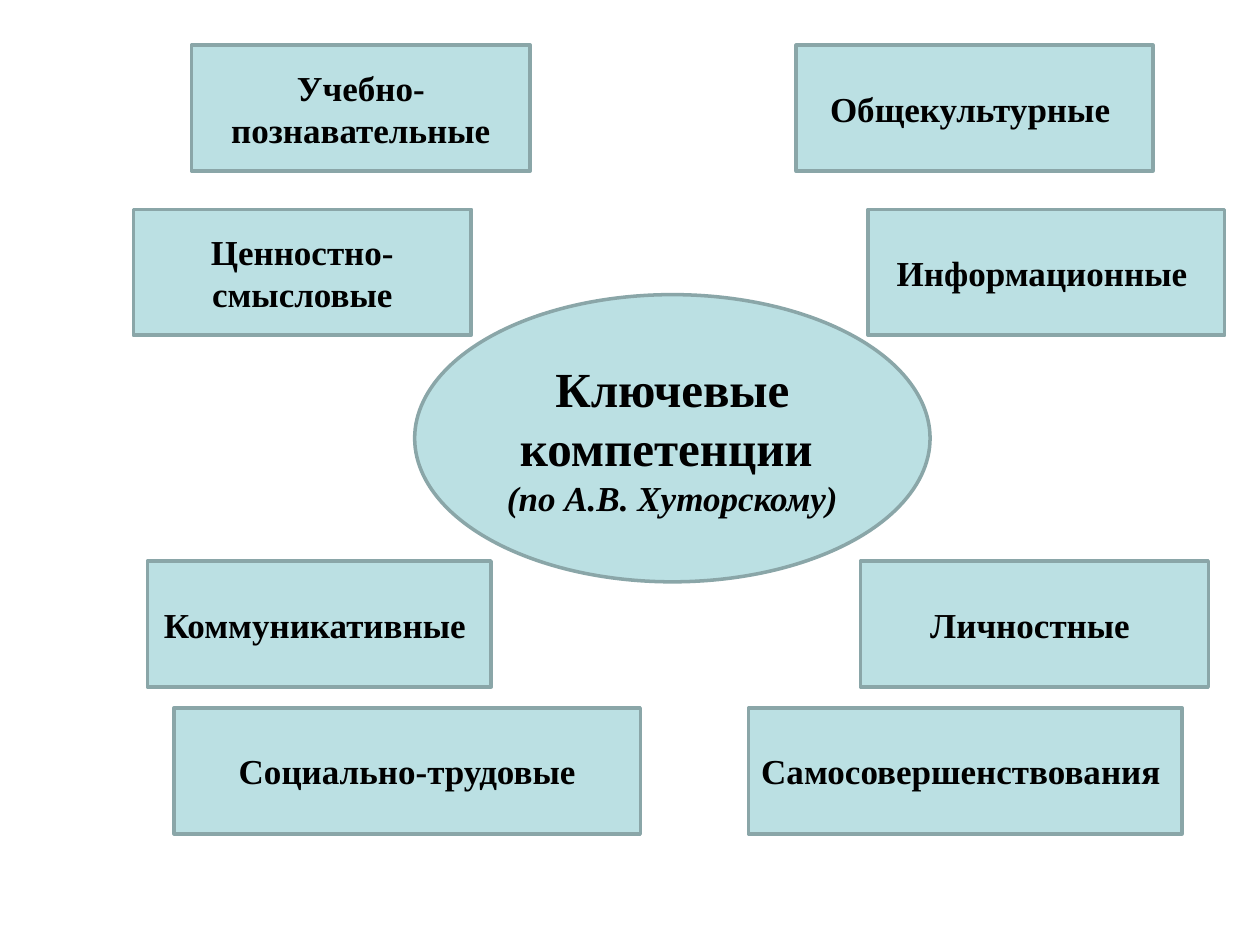
"""Build a slide of the key competences placed around a central oval."""
from dataclasses import dataclass

from pptx import Presentation
from pptx import util as u
from pptx.dml.color import RGBColor
from pptx.enum import shapes, text

COLORS = {"fill": "BBE0E3", "line": "8AA6A8", "text": "000000"}
FONT = "Times New Roman"
BOX_HEIGHT = 2.54
TOP_ROW, UPPER_ROW, LOWER_ROW, BOTTOM_ROW = 0.91, 4.22, 11.31, 14.27


@dataclass(frozen=True)
class Competence:
    label: str
    left: float
    top: float
    width: float


COMPETENCES = [
    Competence("Учебно-познавательные", 3.86, TOP_ROW, 6.83),
    Competence("Ценностно-смысловые", 2.69, UPPER_ROW, 6.81),
    Competence("Коммуникативные ", 2.97, LOWER_ROW, 6.93),
    Competence("Социально-трудовые", 3.51, BOTTOM_ROW, 9.4),
    Competence("Самосовершенствования ", 15.09, BOTTOM_ROW, 8.74),
    Competence("Личностные ", 17.35, LOWER_ROW, 7.01),
    Competence("Информационные ", 17.5, UPPER_ROW, 7.19),
    Competence("Общекультурные ", 16.05, TOP_ROW, 7.19),
]


def color(name: str) -> RGBColor:
    return RGBColor.from_string(COLORS[name])


def write(para, words: str, *, size: float = 20, italic: bool = False) -> None:
    para.alignment = text.PP_ALIGN.CENTER
    span = para.add_run()
    span.text = words
    font = span.font
    font.name, font.size = FONT, u.Pt(size)
    font.bold, font.italic = True, italic
    font.color.rgb = color("text")


def add_figure(page, kind, left: float, top: float, width: float, height: float):
    box = page.shapes.add_shape(kind, u.Cm(left), u.Cm(top), u.Cm(width), u.Cm(height))
    box.shadow.inherit = False
    box.fill.solid()
    box.fill.fore_color.rgb = color("fill")
    box.line.color.rgb = color("line")
    box.line.width = u.Pt(2)
    frame = box.text_frame
    frame.word_wrap = True
    frame.vertical_anchor = text.MSO_ANCHOR.MIDDLE
    return frame


def add_competence(page, item: Competence) -> None:
    frame = add_figure(page, shapes.MSO_SHAPE.RECTANGLE,
                       item.left, item.top, item.width, BOX_HEIGHT)
    write(frame.paragraphs[0], item.label)


def main() -> None:
    deck = Presentation()
    deck.slide_width, deck.slide_height = u.Cm(25.4), u.Cm(19.05)
    page = deck.slides.add_slide(deck.slide_layouts[6])
    center = add_figure(page, shapes.MSO_SHAPE.OVAL, 8.36, 5.94, 10.39, 5.79)
    write(center.paragraphs[0], "Ключевые компетенции ", size=28)
    write(center.add_paragraph(), "(по А.В. Хуторскому)", italic=True)
    for item in COMPETENCES:
        add_competence(page, item)
    deck.save("out.pptx")


if __name__ == "__main__":
    main()
